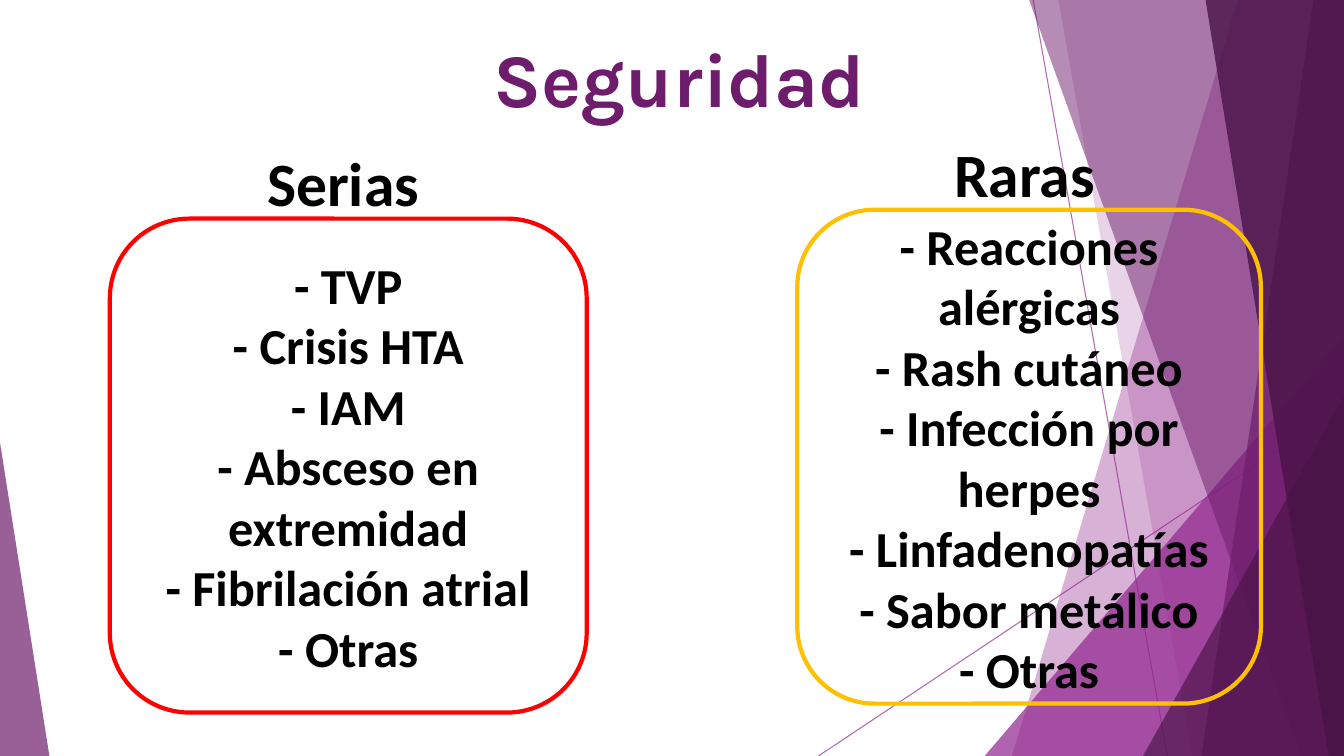
from pptx import Presentation
from pptx.dml.color import RGBColor
from pptx.enum.shapes import MSO_CONNECTOR as Conn, MSO_SHAPE as Shape
from pptx.enum.text import MSO_ANCHOR as Anchor, PP_ALIGN as Align
from pptx.oxml.ns import qn
from pptx.util import Pt
from lxml.etree import SubElement

WIDE, HIGH = 960, 540
PURPLE, DARK, DEEP = "92278F", "6D1D6B", "491447"
SERIOUS = ["- TVP", "- Crisis HTA", "- IAM", "- Absceso en extremidad",
           "- Fibrilación atrial", "- Otras"]
RARE = ["- Reacciones alérgicas", "- Rash cutáneo", "- Infección por herpes",
        "- Linfadenopatías", "- Sabor metálico", "- Otras"]


def paint(color, code, alpha=100):
    """Set a colour from its hex code, with opacity in percent."""
    color.rgb = RGBColor.from_string(code)
    if alpha < 100:
        node = color._xFill.find(qn("a:srgbClr"))
        SubElement(node, qn("a:alpha")).set("val", str(alpha * 1000))


def tint(shape, code, alpha):
    shape.shadow.inherit = False
    shape.fill.solid()
    paint(shape.fill.fore_color, code, alpha)
    shape.line.fill.background()


def add_band(slide, top, base, code, alpha):
    """Fill from a slanted edge to the right side of the slide."""
    pen = slide.shapes.build_freeform(Pt(top), 0)
    pen.add_line_segments([(Pt(WIDE), 0), (Pt(WIDE), Pt(HIGH)), (Pt(base), Pt(HIGH))])
    tint(pen.convert_to_shape(), code, alpha)


def add_wedge(slide, left, top, width, apex, code, alpha):
    """Triangle that stands on the bottom edge."""
    wedge = slide.shapes.add_shape(Shape.ISOSCELES_TRIANGLE, Pt(left), Pt(top),
                                   Pt(width), Pt(HIGH - top))
    wedge.adjustments[0] = apex
    tint(wedge, code, alpha)


def add_ray(slide, *ends):
    ray = slide.shapes.add_connector(Conn.STRAIGHT, *map(Pt, ends))
    ray.line.width = Pt(0.75)
    ray.line.fill.solid()
    paint(ray.line.fill.fore_color, PURPLE, 70)
    SubElement(ray._element.spPr, qn("a:effectLst"))


def write(frame, lines, size, font="Calibri", code="000000", anchor=Anchor.MIDDLE):
    frame.word_wrap = True
    frame.vertical_anchor = anchor
    frame.text = "\n".join(lines)
    for para in frame.paragraphs:
        para.alignment = Align.CENTER
        for run in para.runs:
            run.font.name, run.font.size, run.font.bold = font, Pt(size), True
            paint(run.font.color, code)


def add_label(slide, text, box, size, **style):
    label = slide.shapes.add_textbox(*map(Pt, box))
    write(label.text_frame, [text], size, **style)
    return label


def add_card(slide, lines, box, code):
    card = slide.shapes.add_shape(Shape.ROUNDED_RECTANGLE, *map(Pt, box))
    card.shadow.inherit = False
    card.fill.background()
    card.line.width = Pt(3)
    paint(card.line.color, code)
    write(card.text_frame, lines, 36)


def main():
    deck = Presentation()
    deck.slide_width, deck.slide_height = Pt(WIDE), Pt(HIGH)
    slide = deck.slides.add_slide(deck.slide_layouts[6])

    # Backdrop
    add_ray(slide, 738, 0, 833.8, HIGH)
    add_ray(slide, WIDE, 290.2, 584.6, HIGH)
    add_band(slide, 884.2, 722.9, PURPLE, 36)
    add_band(slide, 756, 851.8, PURPLE, 20)
    add_wedge(slide, 703.4, 239.8, 256.6, 1, PURPLE, 72)
    add_band(slide, 735.1, 929.5, DARK, 50)
    add_band(slide, 938.2, 858.2, DARK, 70)
    add_band(slide, 861.1, 949, DEEP, 80)
    add_wedge(slide, 816.5, 283, 143.5, 1, DEEP, 66)
    add_wedge(slide, 0, 316.1, 35.3, 0, DARK, 70)

    # Title
    title = add_label(slide, "Seguridad", (71.3, 7.2, 828, 104.4), 54,
                      font="Karla", code=DARK)
    title.text_frame.paragraphs[0].line_spacing = 0.9

    # Rare events
    add_card(slide, RARE, (569.5, 149.8, 331.2, 352.8), "FFC000")
    add_label(slide, "Raras", (637.9, 93.6, 187.9, 63.4), 44, anchor=Anchor.TOP)

    # Serious events
    add_card(slide, SERIOUS, (78.5, 156.2, 340.6, 352.8), "FF0000")
    add_label(slide, "Serias", (148.3, 100.1, 193.7, 60.5), 44, anchor=Anchor.TOP)

    deck.save("out.pptx")


if __name__ == "__main__":
    main()
